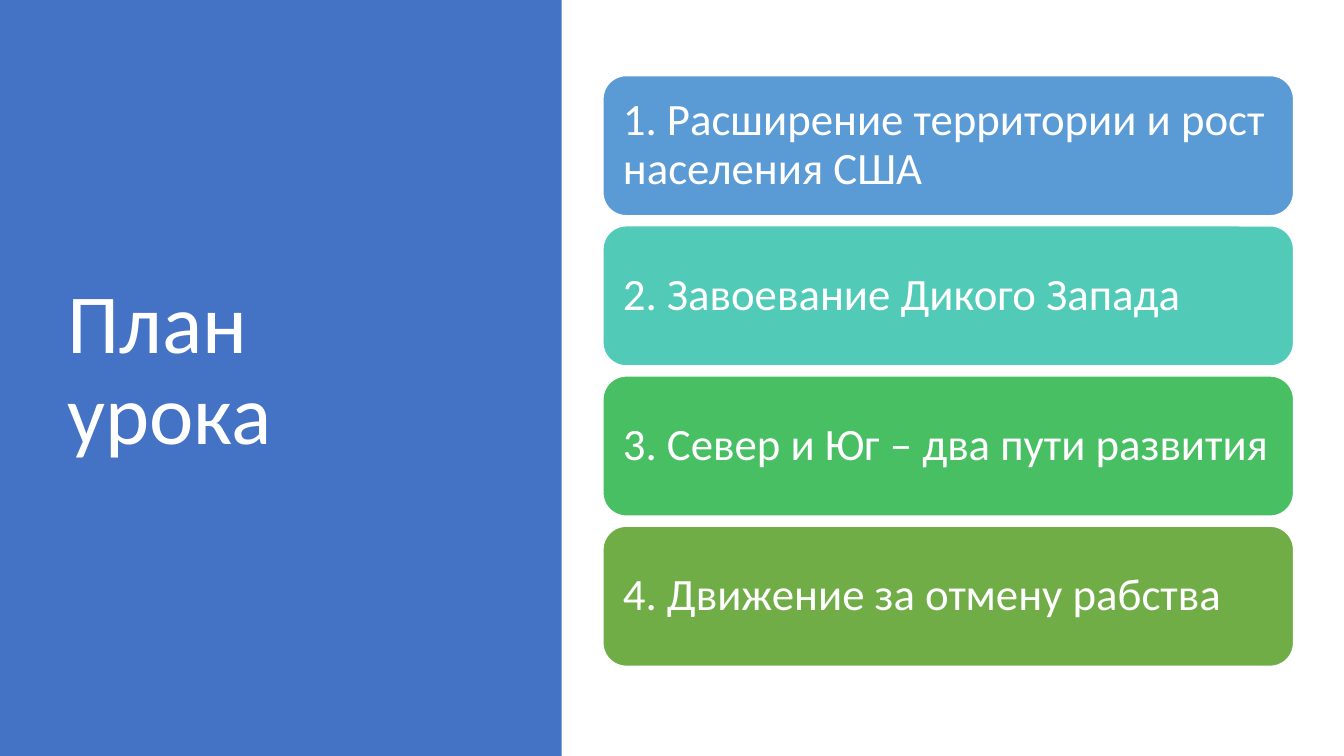
from dataclasses import dataclass

from pptx import Presentation
from pptx.dml.color import RGBColor
from pptx.enum.shapes import MSO_SHAPE
from pptx.enum.text import MSO_ANCHOR, MSO_AUTO_SIZE, PP_ALIGN
from pptx.util import Inches, Pt


@dataclass(frozen=True)
class Theme:
    font: str = "Calibri"
    title_size: int = 60
    topic_size: int = 32
    white: str = "FFFFFF"
    panel: str = "4472C4"
    topics: tuple = ("5B9BD5", "52CAB8", "49BF64", "70AD47")


theme = Theme()


def write_text(shape, text, size, color=theme.white, inset=0.1):
    frame = shape.text_frame
    frame.word_wrap = True
    frame.auto_size = MSO_AUTO_SIZE.NONE
    frame.vertical_anchor = MSO_ANCHOR.MIDDLE
    frame.margin_left = frame.margin_right = Inches(inset)
    paragraph = frame.paragraphs[0]
    paragraph.alignment = PP_ALIGN.LEFT
    paragraph.line_spacing = 0.9
    run = paragraph.add_run()
    run.text = text
    run.font.name = theme.font
    run.font.size = Pt(size)
    run.font.color.rgb = RGBColor.from_string(color)


def add_block(kind, left, top, width, height, fill):
    shape = slide.shapes.add_shape(
        kind, Inches(left), Inches(top), Inches(width), Inches(height)
    )
    shape.shadow.inherit = False
    shape.fill.solid()
    shape.fill.fore_color.rgb = RGBColor.from_string(fill)
    shape.line.fill.background()
    return shape


presentation = Presentation()
presentation.slide_width = Inches(13.33)
presentation.slide_height = Inches(7.5)
slide = presentation.slides.add_slide(presentation.slide_layouts[5])

title = slide.shapes.title
title.left, title.top = Inches(0.57), Inches(0.68)
title.width, title.height = Inches(4.1), Inches(6.02)
write_text(title, "План урока", theme.title_size)

panel = add_block(MSO_SHAPE.RECTANGLE, 0, 0, 5.57, 7.5, theme.panel)
title.element.addprevious(panel.element)

topics = (
    "1. Расширение территории и рост населения США",
    "2. Завоевание Дикого Запада",
    "3. Север и Юг – два пути развития",
    "4. Движение за отмену рабства",
)
first_top, topic_height, gap = 0.75, 1.39, 0.1
for index, (topic, fill) in enumerate(zip(topics, theme.topics)):
    top = first_top + index * (topic_height + gap)
    card = add_block(MSO_SHAPE.ROUNDED_RECTANGLE, 5.98, top, 6.85, topic_height, fill)
    card.line.color.rgb = RGBColor.from_string(theme.white)
    card.line.width = Pt(1)
    write_text(card, topic, theme.topic_size, inset=0.13)

presentation.save("out.pptx")
